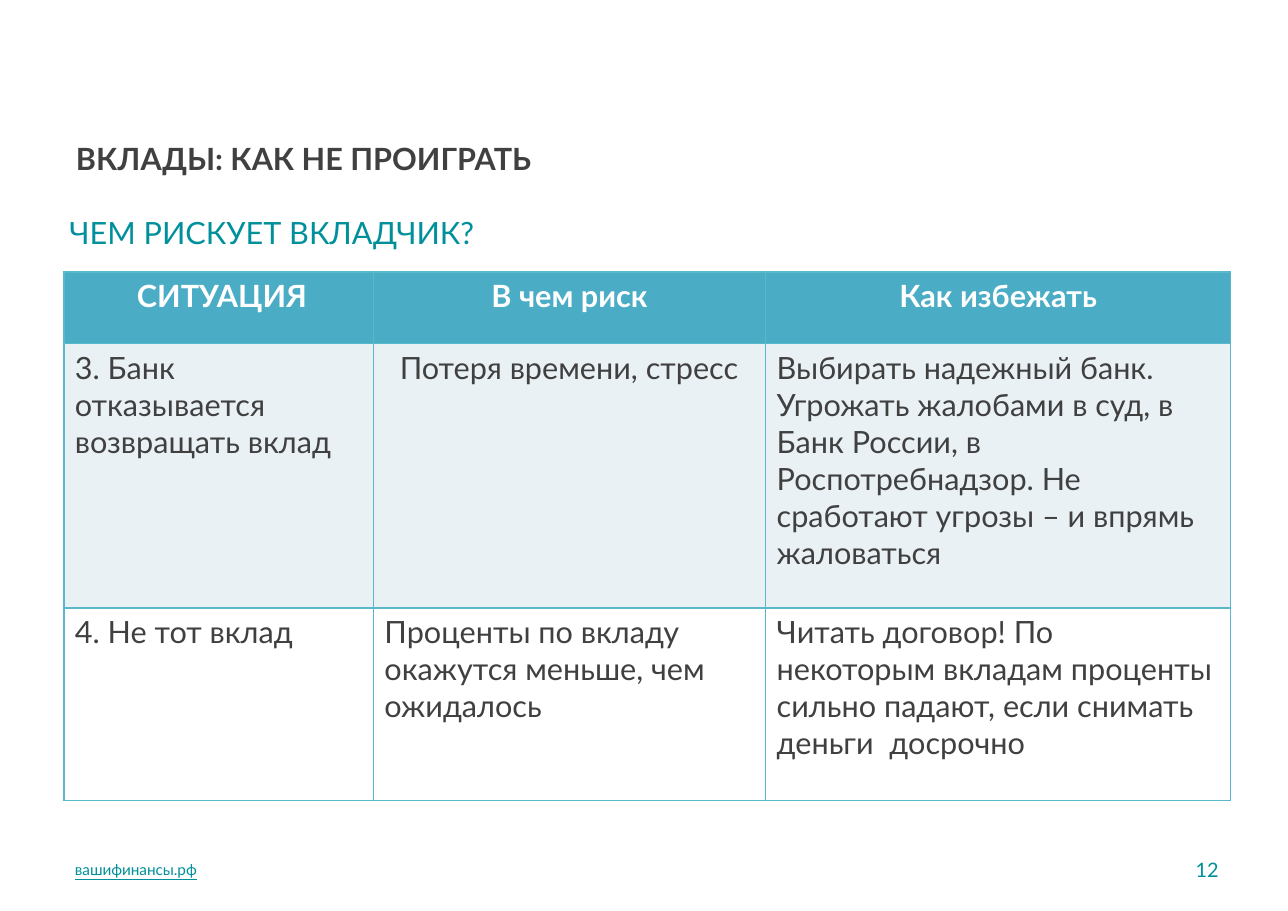
from lxml.etree import SubElement
from pptx import Presentation
from pptx.dml.color import RGBColor
from pptx.enum.text import MSO_ANCHOR as Anchor, PP_ALIGN as Align
from pptx.oxml.ns import qn
from pptx.util import Inches, Pt

COLORS = {
    "text": "404040", "teal": "00909B", "white": "FFFFFF",
    "header": "4BACC6", "band": "E9F1F5", "border": "5AB8CB",
}
COLUMN_WIDTHS = [2.81, 3.56, 4.22]
ROW_HEIGHTS = [0.65, 2.4, 1.75]
ROW_FILLS = ["header", "band", "white"]
RISKS = [
    ["СИТУАЦИЯ", "В чем риск", "Как избежать"],
    ["3. Банк отказывается возвращать вклад",
     "Потеря времени, стресс",
     "Выбирать надежный банк. Угрожать жалобами в суд, в Банк России, "
     "в Роспотребнадзор. Не сработают угрозы – и впрямь жаловаться"],
    ["4. Не тот вклад",
     "Проценты по вкладу окажутся меньше, чем ожидалось",
     "Читать договор! По некоторым вкладам проценты сильно падают, "
     "если снимать деньги  досрочно"],
]
# Extra left indents, in inches, by (row, column)
INDENTS = {(0, 0): 0.06, (1, 1): 0.14}


def write(frame, text, size=20, color="text", bold=False, underline=False,
          align=Align.LEFT):
    frame.word_wrap = True
    paragraph = frame.paragraphs[0]
    paragraph.alignment = align
    run = paragraph.add_run()
    run.text = text
    font = run.font
    font.name, font.size = "Lato", Pt(size)
    font.bold, font.underline = bold, underline
    font.color.rgb = RGBColor.from_string(COLORS[color])


def add_label(slide, box, text, anchor=Anchor.TOP, **style):
    frame = slide.shapes.add_textbox(*map(Inches, box)).text_frame
    frame.margin_left = frame.margin_right = Inches(0.11)
    frame.margin_top = frame.margin_bottom = Inches(0.05)
    frame.vertical_anchor = anchor
    write(frame, text, **style)


def set_borders(cell):
    properties = cell._tc.get_or_add_tcPr()
    for side in ("a:lnL", "a:lnR", "a:lnT", "a:lnB"):
        line = SubElement(properties, qn(side), w=str(Pt(1)))
        fill = SubElement(line, qn("a:solidFill"))
        SubElement(fill, qn("a:srgbClr"), val=COLORS["border"])


def add_headings(slide, left, top, width):
    add_label(slide, (left, top, width, 0.96), "ВКЛАДЫ: КАК НЕ ПРОИГРАТЬ", bold=True)
    add_label(slide, (left - 0.06, top + 0.67, width, 0.58), "ЧЕМ РИСКУЕТ ВКЛАДЧИК?",
              color="teal")


def add_risk_table(slide, left, top):
    size = (sum(COLUMN_WIDTHS), sum(ROW_HEIGHTS))
    table = slide.shapes.add_table(len(RISKS), len(COLUMN_WIDTHS),
                                   *map(Inches, (left, top, *size))).table
    for column, width in zip(table.columns, COLUMN_WIDTHS):
        column.width = Inches(width)
    for r, (texts, height, fill) in enumerate(zip(RISKS, ROW_HEIGHTS, ROW_FILLS)):
        table.rows[r].height = Inches(height)
        is_header = r == 0
        for c, text in enumerate(texts):
            cell = table.cell(r, c)
            cell.margin_left = Inches(0.1 + INDENTS.get((r, c), 0))
            set_borders(cell)
            cell.fill.solid()
            cell.fill.fore_color.rgb = RGBColor.from_string(COLORS[fill])
            write(cell.text_frame, text, bold=is_header,
                  color="white" if is_header else "text",
                  align=Align.CENTER if is_header else Align.LEFT)


def add_footer(slide, left, top, width):
    number_width = 0.87
    add_label(slide, (left, top, 3.97, 0.44), "вашифинансы.рф", Anchor.MIDDLE,
              size=10, color="teal", underline=True)
    add_label(slide, (left + width - number_width, top, number_width, 0.44), "12",
              Anchor.MIDDLE, size=13, color="teal", align=Align.RIGHT)


def main():
    deck = Presentation()
    deck.slide_width, deck.slide_height = Inches(11.69), Inches(8.27)
    slide = deck.slides.add_slide(deck.slide_layouts[6])
    add_headings(slide, 0.58, 1.22, 10.52)
    add_risk_table(slide, 0.58, 2.47)
    add_footer(slide, 0.57, 7.67, 10.6)
    deck.save("out.pptx")


if __name__ == "__main__":
    main()
